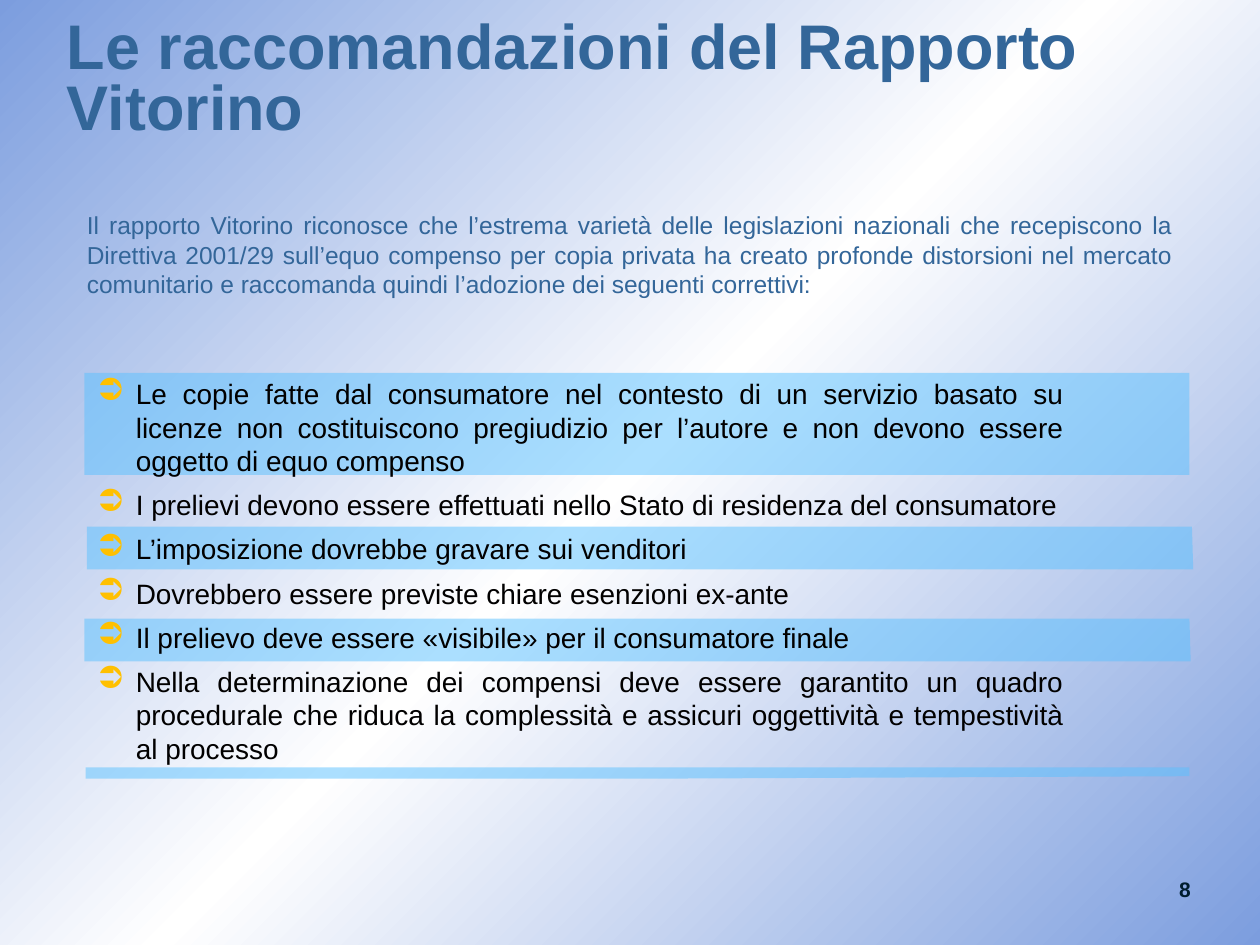
from copy import deepcopy
from lxml import etree
from pptx import Presentation
from pptx.dml.color import RGBColor
from pptx.enum.shapes import MSO_SHAPE
from pptx.enum.text import MSO_ANCHOR, PP_ALIGN
from pptx.oxml.ns import qn
from pptx.util import Inches, Pt

RECT = MSO_SHAPE.RECTANGLE
MIDDLE = MSO_ANCHOR.MIDDLE
LEFT, CENTER, JUSTIFY = PP_ALIGN.LEFT, PP_ALIGN.CENTER, PP_ALIGN.JUSTIFY


def style(para, size, color, align, bold=False):
    para.alignment = align
    font = para.font
    font.name = "Arial"
    font.size = Pt(size)
    font.bold = bold
    font.color.rgb = RGBColor.from_string(color)


def paint(shape):
    shape.shadow.inherit = False
    shape.line.fill.background()
    shape.fill.solid()
    shape.fill.fore_color.rgb = RGBColor.from_string("59C1FF")
    tint = next(shape.fill._xPr.iter(qn("a:srgbClr")))
    etree.SubElement(tint, qn("a:alpha"), val="50000")


prs = Presentation()
prs.slide_width, prs.slide_height = Inches(10), Inches(7.5)
slide = prs.slides.add_slide(prs.slide_layouts[5])
shapes = slide.shapes

fill = slide.background.fill
fill.gradient()
fill.gradient_angle = 315
stops = next(slide._element.iter(qn("a:gsLst")))
stops.append(deepcopy(stops[-1]))
for stop, place, color in zip(fill.gradient_stops, (0, 0.5, 1),
                              ("7C9DDE", "FFFFFF", "7C9DDE")):
    stop.position = place
    stop.color.rgb = RGBColor.from_string(color)

bands = [
    [(0.67, 4.91), (9.44, 4.91), (9.45, 5.25), (0.67, 5.25)],
    [(0.69, 4.18), (9.46, 4.18), (9.47, 4.52), (0.69, 4.52)],
    [(0.68, 6.09), (9.44, 6.09), (9.44, 6.16), (5.08, 6.18), (0.68, 6.18)],
]
for band in bands:
    points = [(Inches(x), Inches(y)) for x, y in band]
    pen = shapes.build_freeform(*points[0])
    pen.add_line_segments(points[1:], close=True)
    paint(pen.convert_to_shape())
paint(shapes.add_shape(RECT, Inches(0.67), Inches(2.96), Inches(8.77), Inches(0.81)))

title = shapes.title
title.left, title.top = Inches(0.43), Inches(0.15)
title.width, title.height = Inches(9.37), Inches(1)
title.text_frame.text = "Le raccomandazioni del Rapporto Vitorino"
title.text_frame.vertical_anchor = MIDDLE
para = title.text_frame.paragraphs[0]
para.line_spacing = 0.8
style(para, 36, "336699", LEFT, True)

intro = shapes.add_textbox(Inches(0.59), Inches(1.62), Inches(8.82), Inches(1.18))
intro.text_frame.word_wrap = True
intro.text_frame.text = (
    "Il rapporto Vitorino riconosce che l’estrema varietà delle legislazioni nazionali "
    "che recepiscono la Direttiva 2001/29 sull’equo compenso per copia privata ha creato "
    "profonde distorsioni nel mercato comunitario e raccomanda quindi l’adozione dei "
    "seguenti correttivi:")
style(intro.text_frame.paragraphs[0], 14, "336699", JUSTIFY)

items = [
    "Le copie fatte dal consumatore nel contesto di un servizio basato su licenze non "
    "costituiscono pregiudizio per l’autore e non devono essere oggetto di equo compenso",
    "I prelievi devono essere effettuati nello Stato di residenza del consumatore",
    "L’imposizione dovrebbe gravare sui venditori",
    "Dovrebbero essere previste chiare esenzioni ex-ante",
    "Il prelievo deve essere «visibile» per il consumatore finale",
    "Nella determinazione dei compensi deve essere garantito un quadro procedurale che "
    "riduca la complessità e assicuri oggettività e tempestività al processo",
]
box = shapes.add_textbox(Inches(0.67), Inches(2.94), Inches(7.87), Inches(3.57))
box.text_frame.word_wrap = True
box.text_frame.text = "\n".join(items)
for para in box.text_frame.paragraphs:
    para.space_after = Pt(6)
    props = para._p.get_or_add_pPr()
    props.set("marL", str(Inches(0.31)))
    props.set("indent", str(-Inches(0.31)))
    hue = etree.SubElement(props, qn("a:buClr"))
    etree.SubElement(hue, qn("a:srgbClr"), val="FFC000")
    etree.SubElement(props, qn("a:buSzPct"), val="110000")
    etree.SubElement(props, qn("a:buChar"), char="➲")
    style(para, 16, "010000", JUSTIFY)

number = shapes.add_textbox(Inches(9.17), Inches(6.91), Inches(0.47), Inches(0.3))
number.text_frame.word_wrap = True
number.text_frame.text = "8"
style(number.text_frame.paragraphs[0], 12, "001D2E", CENTER, True)

prs.save("out.pptx")
